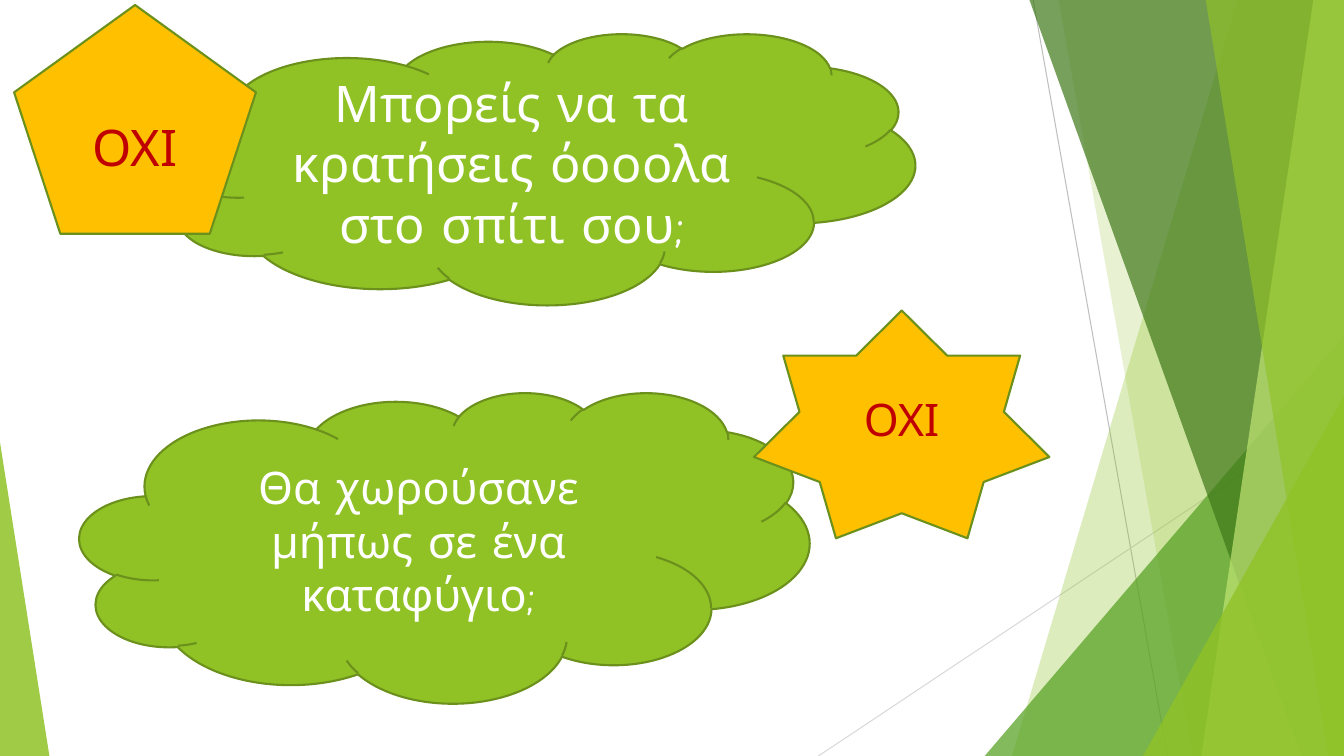
from lxml import etree
from pptx import Presentation
from pptx.dml.color import RGBColor
from pptx.enum import shapes, text
from pptx.oxml import ns
from pptx.util import Pt

KIND = shapes.MSO_SHAPE


def color(fmt, tone):
    fmt.solid()
    fmt.fore_color.rgb = RGBColor.from_string(tone)


def facet(shape, tone, alpha):
    shape.shadow.inherit = False
    color(shape.fill, tone)
    shape.line.fill.background()
    rgb = shape.fill._xPr.find(".//" + ns.qn("a:srgbClr"))
    etree.SubElement(rgb, ns.qn("a:alpha"), val=str(alpha * 1000))


deck = Presentation()
deck.slide_width, deck.slide_height = Pt(960), Pt(540)
slide = deck.slides.add_slide(deck.slide_layouts[6])
tree = slide.shapes

for x1, y1, x2, y2, tone in [
    (738, 0, 834, 540, "BFBFBF"),
    (960, 290, 584.6, 540, "D9D9D9"),
]:
    rule = tree.add_connector(
        shapes.MSO_CONNECTOR.STRAIGHT, Pt(x1), Pt(y1), Pt(x2), Pt(y2)
    )
    color(rule.line.fill, tone)
    rule.line.width = Pt(0.75)
    etree.SubElement(rule._element.spPr, ns.qn("a:effectLst"))

bands = [
    ("band", (884.2, 722.9), "90C226", 30),
    ("band", (756, 851.8), "90C226", 20),
    ("wedge", (703.4, 239.8, 256.6, 300.2, 1), "54A021", 72),
    ("band", (735.1, 929.5), "3F7819", 70),
    ("band", (938.2, 858.2), "C0E474", 70),
    ("band", (861.1, 949), "90C226", 65),
    ("wedge", (816.5, 283, 143.5, 257, 1), "90C226", 80),
    ("wedge", (0, 316, 35.3, 224, 0), "90C226", 85),
]
for kind, place, tone, alpha in bands:
    if kind == "band":
        top, foot = place
        pen = tree.build_freeform(Pt(top), Pt(-0.7))
        pen.add_line_segments(
            [(Pt(960), Pt(-0.7)), (Pt(960), Pt(540)), (Pt(foot), Pt(540))]
        )
        shape = pen.convert_to_shape()
    else:
        *box, peak = place
        shape = tree.add_shape(KIND.ISOSCELES_TRIANGLE, *map(Pt, box))
        shape.adjustments[0] = peak
    facet(shape, tone, alpha)

green, gold = ("90C226", "FFFFFF"), ("FFC000", "C00000")
notes = [
    (KIND.CLOUD, (115.9, 23.8, 537.8, 193.7), green, 36,
     "Μπορείς να τα κρατήσεις όοοολα στο σπίτι σου;"),
    (KIND.CLOUD, (56.9, 280.1, 521.3, 221.8), green, 32,
     "Θα χωρούσανε μήπως σε ένα καταφύγιο;"),
    (KIND.REGULAR_PENTAGON, (10.1, 3.6, 172.8, 163.4), gold, 36, "ΟΧΙ"),
    (KIND.STAR_7_POINT, (538.6, 221.8, 211, 162.7), gold, 32, "ΟΧΙ"),
]
for kind, box, (tone, ink), size, words in notes:
    note = tree.add_shape(kind, *map(Pt, box))
    note.shadow.inherit = False
    color(note.fill, tone)
    color(note.line.fill, "6B901C")
    note.line.width = Pt(1.5)
    frame = note.text_frame
    frame.word_wrap = True
    frame.vertical_anchor = text.MSO_ANCHOR.MIDDLE
    frame.text = words
    para = frame.paragraphs[0]
    para.alignment = text.PP_ALIGN.CENTER
    para.font.name = "Comic Neue"
    para.font.size = Pt(size)
    color(para.font.fill, ink)

deck.save("out.pptx")
